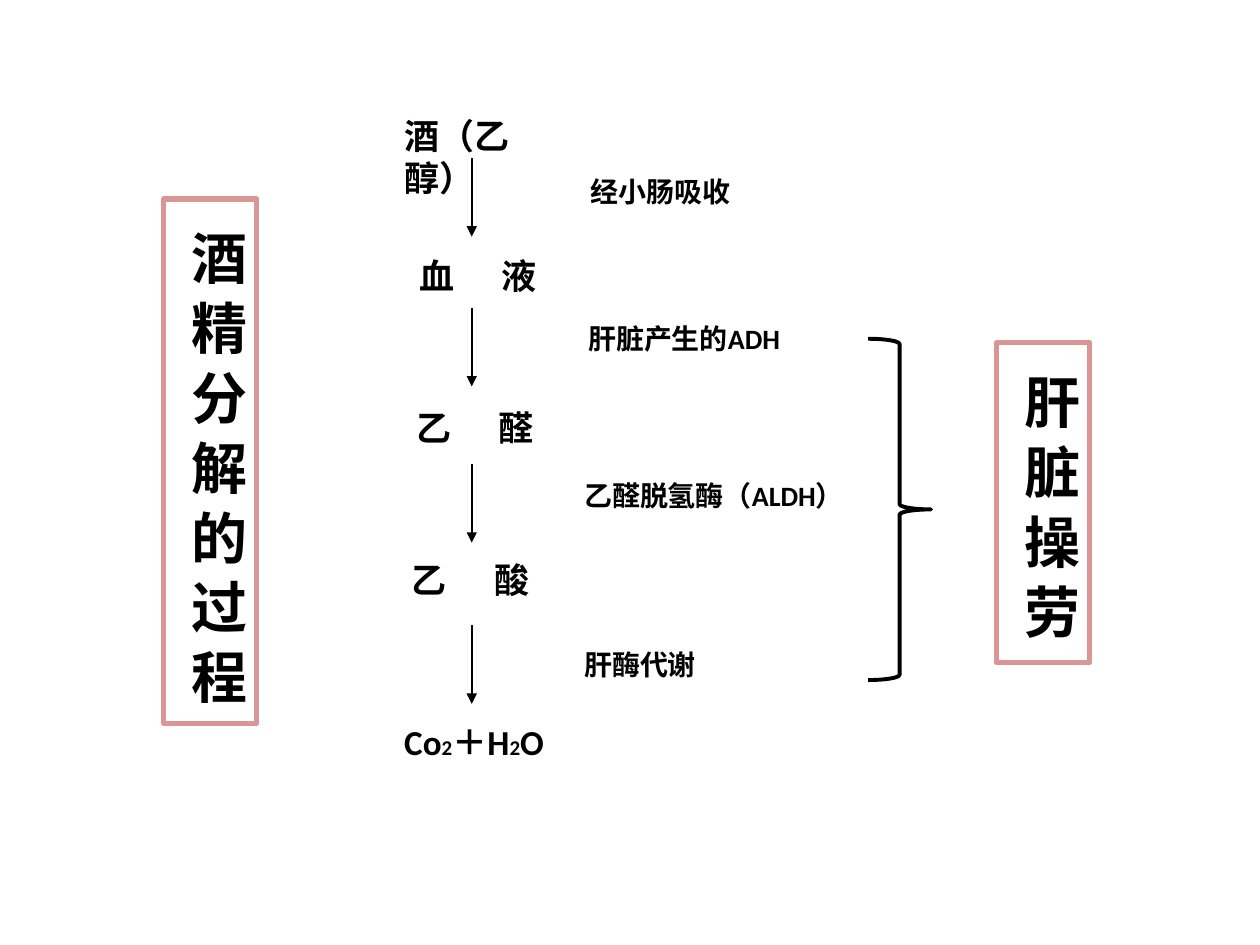
from pptx import Presentation
from pptx.dml.color import RGBColor
from pptx.enum import shapes, text
from pptx.oxml.ns import qn
from pptx.util import Cm, Pt
from lxml import etree

COLORS = {"ink": "000000", "frame": "D99694"}
FONT = "Calibri"

# left, top, width, runs of (text, size); a tab separates spaced characters
STAGES = [
    (7.9, 2.18, 3.76, [("酒（乙醇）", 20)]),
    (8.2, 5.0, 3.76, [("血\t液", 20)]),
    (8.15, 8.08, 3.76, [("乙\t醛", 20)]),
    (8.05, 11.13, 3.76, [("乙\t酸", 20)]),
    (7.9, 14.4, 4.09, [("Co", 20), ("2", 12), ("＋H", 20), ("2", 12), ("O", 20)]),
]
STEPS = [
    (11.66, 3.4, "经小肠吸收"),
    (11.61, 6.35, "肝脏产生的ADH"),
    (11.53, 9.53, "乙醛脱氢酶（ALDH）"),
    (11.53, 12.93, "肝酶代谢"),
]
# left, top, height, text
BANNERS = [
    (3.3, 4.01, 10.57, "酒 精 分 解 的 过 程"),
    (20.09, 6.91, 6.45, "肝 脏 操 劳"),
]
ARROW_X, ARROW_LENGTH = 9.51, 1.59
ARROW_TOPS = [3.18, 6.2, 9.35, 12.6]
BRACE = (17.5, 6.83, 1.27, 6.88)
TAB_STOP = 1.66


def rgb(name):
    return RGBColor.from_string(COLORS[name])


def write(sp, runs, tab=None):
    """Fill a shape with one bold, left-aligned paragraph of (text, size) runs."""
    tf = sp.text_frame
    tf.word_wrap = True
    tf.vertical_anchor = text.MSO_ANCHOR.TOP
    p = tf.paragraphs[0]
    p.alignment = text.PP_ALIGN.LEFT
    if tab:
        tabs = etree.SubElement(p._p.get_or_add_pPr(), qn("a:tabLst"))
        etree.SubElement(tabs, qn("a:tab"), pos=str(Cm(tab)), algn="l")
    for content, size in runs:
        r = p.add_run()
        r.text = content
        r.font.name, r.font.size, r.font.bold = FONT, Pt(size), True
        r.font.color.rgb = rgb("ink")
    return tf


def add_text(slide, box, runs, **fmt):
    sp = slide.shapes.add_textbox(*map(Cm, box))
    write(sp, runs, **fmt)


def add_outline(slide, kind, box, color, width):
    sp = slide.shapes.add_shape(kind, *map(Cm, box))
    sp.shadow.inherit = False
    sp.fill.background()
    sp.line.color.rgb = rgb(color)
    sp.line.width = Pt(width)
    return sp


def add_banner(slide, left, top, height, content):
    """Framed vertical title."""
    sp = add_outline(slide, shapes.MSO_SHAPE.RECTANGLE,
                     (left, top, 1.88, height), "frame", 3)
    tf = write(sp, [(content, 32)])
    tf.margin_top = Cm(0.64)
    tf._txBody.bodyPr.set("vert", "eaVert")


def add_arrow(slide, x, top, length):
    line = slide.shapes.add_connector(
        shapes.MSO_CONNECTOR.STRAIGHT, Cm(x), Cm(top), Cm(x), Cm(top + length))
    line.line.color.rgb = rgb("ink")
    line.line.width = Pt(1)
    etree.SubElement(line.line._get_or_add_ln(), qn("a:tailEnd"), type="triangle")
    etree.SubElement(line._element.spPr, qn("a:effectLst"))


def main():
    prs = Presentation()
    prs.slide_width, prs.slide_height = Cm(25.4), Cm(19.05)
    slide = prs.slides.add_slide(prs.slide_layouts[6])

    for banner in BANNERS:
        add_banner(slide, *banner)
    for left, top, width, runs in STAGES:
        add_text(slide, (left, top, width, 1.12), runs, tab=TAB_STOP)
    for left, top, content in STEPS:
        add_text(slide, (left, top, 6.15, 0.94), [(content, 16)])
    for top in ARROW_TOPS:
        add_arrow(slide, ARROW_X, top, ARROW_LENGTH)
    add_outline(slide, shapes.MSO_SHAPE.RIGHT_BRACE, BRACE, "ink", 2.25)

    prs.save("out.pptx")


if __name__ == "__main__":
    main()
